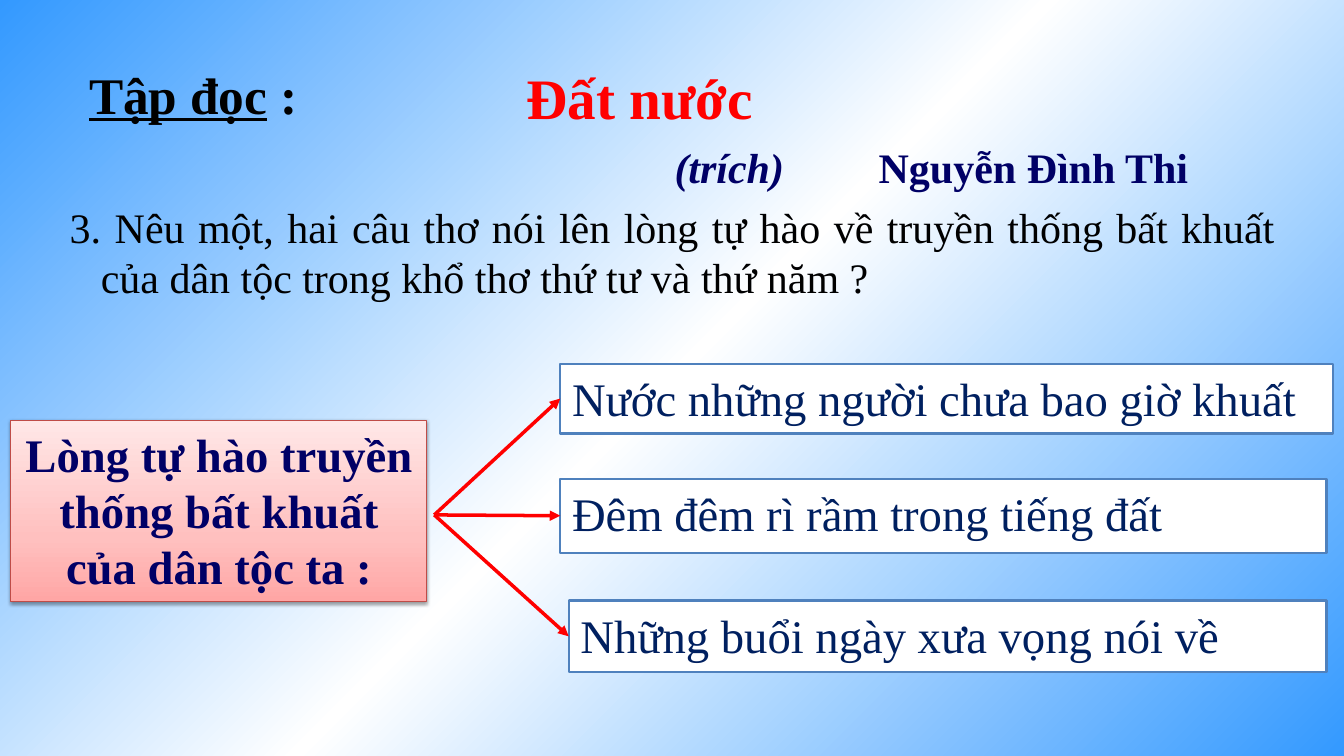
from lxml import etree
from pptx import Presentation
from pptx.dml.color import RGBColor
from pptx.enum import shapes, text
from pptx.oxml import ns
from pptx.util import Inches, Pt

FONT = "Times New Roman"
NAVY, RED, BLACK, WHITE = "000066", "FF0000", "000000", "FFFFFF"


def colour(value):
    return RGBColor.from_string(value)


def add_xml(parent, tag, **attributes):
    return etree.SubElement(parent, ns.qn(tag), attributes)


def set_gradient(fill, owner, stops, angle):
    fill.gradient()
    fill.gradient_angle = angle
    stop_list = next(owner.iter(ns.qn("a:gsLst")))
    for stop in list(stop_list):
        stop_list.remove(stop)
    for position, value in stops:
        stop = add_xml(stop_list, "a:gs", pos=str(position * 1000))
        add_xml(stop, "a:srgbClr", val=value)


def place(shape, left, top, width, height):
    shape.left, shape.top = Inches(left), Inches(top)
    shape.width, shape.height = Inches(width), Inches(height)


def write(shape, runs, size, ink, align="LEFT", before=0, margin=0, indent=0, bold=False, italic=False):
    frame = shape.text_frame
    frame.word_wrap = True
    frame.auto_size = text.MSO_AUTO_SIZE.NONE
    frame.vertical_anchor = text.MSO_ANCHOR.TOP
    frame.margin_left = frame.margin_right = Inches(0.14)
    frame.margin_top = frame.margin_bottom = Inches(0.07)
    line = frame.paragraphs[0]
    line.alignment = getattr(text.PP_ALIGN, align)
    line.space_before = Pt(before)
    properties = line._p.get_or_add_pPr()
    properties.set("marL", str(Inches(margin)))
    properties.set("indent", str(Inches(indent)))
    add_xml(properties, "a:buNone")
    for words, underlined in runs:
        run = line.add_run()
        run.text = words
        run.font.name, run.font.size = FONT, Pt(size)
        run.font.bold, run.font.italic = bold, italic
        run.font.underline = underlined
        run.font.color.rgb = colour(ink)


def add_label(slide, box, runs, size, ink, **style):
    write(slide.shapes.add_textbox(*map(Inches, box)), runs, size, ink, **style)


def add_box(slide, box, line_colour, line_width):
    panel = slide.shapes.add_shape(shapes.MSO_SHAPE.RECTANGLE, *map(Inches, box))
    panel.shadow.inherit = False
    panel.line.color.rgb = colour(line_colour)
    panel.line.width = Pt(line_width)
    return panel


def add_heading(slide, left, top):
    add_label(slide, (left, top, 4, 0.9), [("Tập đọc", True), (" :", False)], 44, BLACK, bold=True)
    poem = slide.shapes.title
    place(poem, left + 5.21, top - 0.01, 9.87, 0.95)
    write(poem, [("Đất nước", False)], 49, RED, before=3, bold=True)
    add_label(slide, (left + 6.97, top + 0.94, 2, 0.75), [("(trích)", False)], 36, NAVY, bold=True, italic=True)
    add_label(slide, (left + 9.4, top + 0.94, 4.5, 0.75), [("Nguyễn Đình Thi", False)], 36, NAVY, bold=True)


def add_question(slide, box):
    question = slide.placeholders[1]
    place(question, *box)
    words = "3. Nêu một, hai câu thơ nói lên lòng tự hào về truyền thống bất khuất của dân tộc trong khổ thơ thứ tư và thứ năm ?"
    write(question, [(words, False)], 36, BLACK, align="JUSTIFY", before=3, margin=0.53, indent=-0.37)


def add_theme(slide, box):
    theme = add_box(slide, box, "BF4C48", 0.75)
    set_gradient(theme.fill, theme._element, [(0, "FFA6A5"), (35, "FFC0BF"), (100, "FFE7E7")], 90)
    effects = theme._element.spPr.find(ns.qn("a:effectLst"))
    shadow = add_xml(effects, "a:outerShdw", blurRad=str(Pt(3.1)), dist=str(Pt(1.6)), dir="5400000", rotWithShape="0")
    add_xml(add_xml(shadow, "a:srgbClr", val=BLACK), "a:alpha", val="38000")
    words = "Lòng tự hào truyền thống bất khuất của dân tộc ta :"
    write(theme, [(words, False)], 40, NAVY, align="CENTER", before=3, bold=True)


def add_verse(slide, box, words, origin):
    verse = add_box(slide, box, "4F81BD", 2)
    verse.fill.solid()
    verse.fill.fore_color.rgb = colour(WHITE)
    write(verse, [(words, False)], 40, "002060", before=3, margin=0.53, indent=-0.53)
    left, top, _, height = box
    ends = (*origin, left, top + height / 2)
    arrow = slide.shapes.add_connector(shapes.MSO_CONNECTOR.STRAIGHT, *map(Inches, ends))
    arrow.line.color.rgb = colour(RED)
    arrow.line.width = Pt(3)
    add_xml(arrow.line._get_or_add_ln(), "a:tailEnd", type="triangle")
    add_xml(arrow._element.spPr, "a:effectLst")


def build_lesson(deck):
    slide = deck.slides.add_slide(deck.slide_layouts[1])
    set_gradient(slide.background.fill, slide.element, [(0, "3399FF"), (50, WHITE), (100, "3399FF")], 315)
    add_heading(slide, 0.92, 0.68)
    add_question(slide, (0.53, 2.33, 14.8, 1.5))
    add_theme(slide, (0.13, 5, 4.95, 2.16))
    verses = [
        ((6.67, 4.33, 9.2, 0.83), "Nước những người chưa bao giờ khuất"),
        ((6.67, 5.7, 9.12, 0.88), "Đêm đêm rì rầm trong tiếng đất"),
        ((6.77, 7.15, 9.02, 0.85), "Những buổi ngày xưa vọng nói về"),
    ]
    for box, words in verses:
        add_verse(slide, box, words, (5.17, 6.13))


def main():
    deck = Presentation()
    deck.slide_width, deck.slide_height = Inches(16), Inches(9)
    build_lesson(deck)
    deck.save("out.pptx")


if __name__ == "__main__":
    main()
